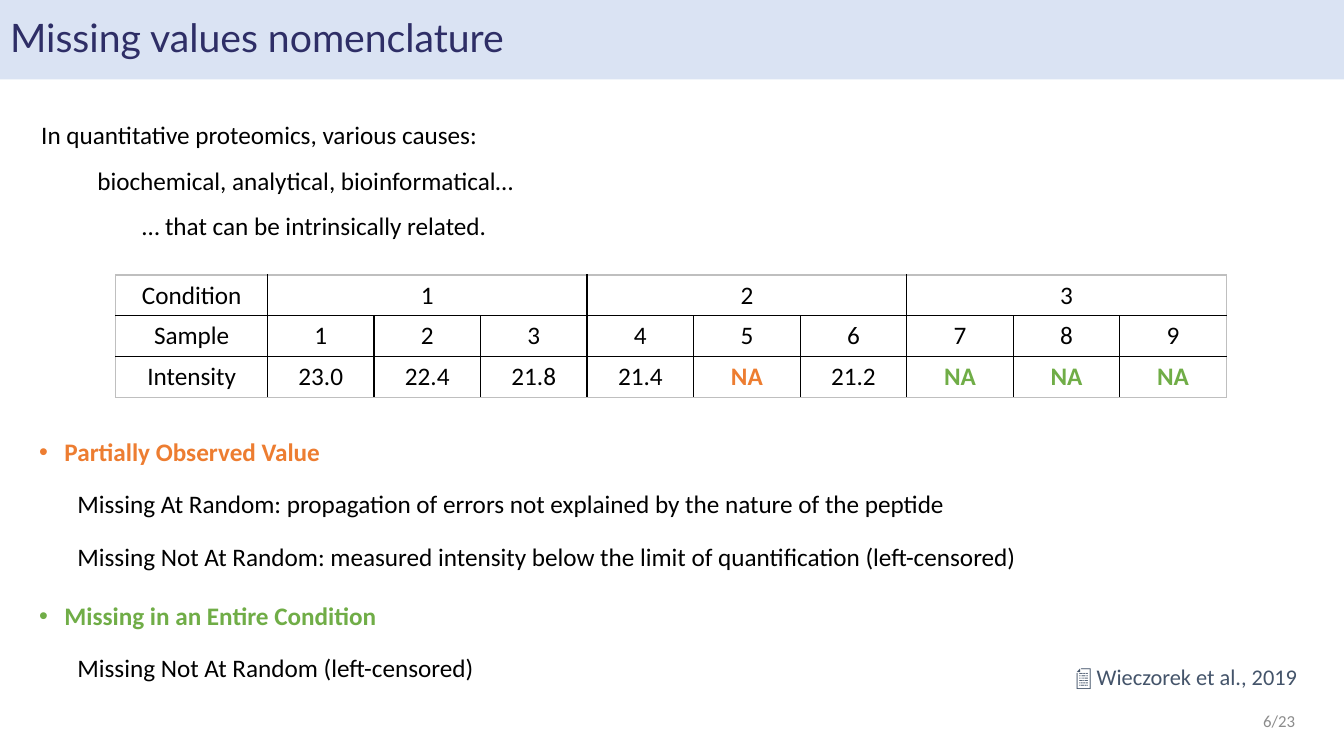
"""Build the slide on the nomenclature of missing values."""
import pptx
import pptx.util
import pptx.dml.color
import pptx.enum.text
import pptx.oxml
import pptx.oxml.ns
from pptx.util import Cm

INK = {"black": "000000", "orange": "ED7D31", "green": "70AD47", "slate": "44546A",
       "navy": "2E2E66", "grey": "8C8C8C", "band": "DAE3F3", "edge": "BFBFBF"}
ALIGN = pptx.enum.text.PP_ALIGN
MID = pptx.enum.text.MSO_ANCHOR.MIDDLE
NONE = pptx.enum.text.MSO_AUTO_SIZE.NONE


def write(para, text, ink="black", size=18, face="Calibri", bold=False, **form):
    para.text = text
    look = {"name": face, "size": pptx.util.Pt(size), "bold": bold}
    for key, val in look.items():
        setattr(para.font, key, val)
    para.font.color.rgb = pptx.dml.color.RGBColor.from_string(INK[ink])
    for key, val in form.items():
        setattr(para, key, val)


def add_box(left, top, width, height, wrap=True, anchor=pptx.enum.text.MSO_ANCHOR.TOP):
    frame = slide.shapes.add_textbox(Cm(left), Cm(top), Cm(width), Cm(height)).text_frame
    frame.word_wrap = wrap
    frame.vertical_anchor = anchor
    return frame


deck = pptx.Presentation()
deck.slide_width, deck.slide_height = Cm(33.87), Cm(19.05)
slide = deck.slides.add_slide(deck.slide_layouts[5])

title = slide.shapes.title
place = {"left": Cm(0), "top": Cm(0), "width": deck.slide_width, "height": Cm(2)}
for key, val in place.items():
    setattr(title, key, val)
title.fill.solid()
title.fill.fore_color.rgb = pptx.dml.color.RGBColor.from_string(INK["band"])
title.text_frame.auto_size = NONE
title.text_frame.vertical_anchor = MID
write(title.text_frame.paragraphs[0], "Missing values nomenclature", "navy", 28, "Lato",
      alignment=ALIGN.LEFT, line_spacing=0.9)

intro = add_box(0.79, 2.51, 14.3, 3.61, wrap=False)
causes = ["In quantitative proteomics, various causes:",
          "\t biochemical, analytical, bioinformatical…",
          "\t\t… that can be intrinsically related."]
for num, text in enumerate(causes):
    para = intro.add_paragraph() if num else intro.paragraphs[0]
    write(para, text, line_spacing=1.5, alignment=ALIGN.LEFT)

rows = [["Condition", "1", "", "", "2", "", "", "3", "", ""],
        ["Sample", *"123456789"],
        ["Intensity", "23.0", "22.4", "21.8", "21.4", "NA", "21.2", "NA", "NA", "NA"]]
deep, wide = len(rows), len(rows[0])
grid = slide.shapes.add_table(deep, wide, Cm(2.92), Cm(6.93), Cm(27.97), Cm(3.09)).table
for num, col in enumerate(grid.columns):
    col.width = Cm(2.685) if num else Cm(3.82)
for row in grid.rows:
    row.height = Cm(1.03)
for num in range(1, wide, 3):
    grid.cell(0, num).merge(grid.cell(0, num + 2))

for r, row in enumerate(rows):
    for c, text in enumerate(row):
        cell = grid.cell(r, c)
        cell.fill.background()
        if cell.is_spanned:
            continue
        cell.vertical_anchor = MID
        ink = "black" if text != "NA" else "orange" if c < 7 else "green"
        write(cell.text_frame.paragraphs[0], text, ink, bold=text == "NA",
              alignment=ALIGN.CENTER)
        span = cell.span_width if cell.is_merge_origin else 1
        outer = {"L": c == 0, "R": c + span == wide, "T": r == 0, "B": r == deep - 1}
        for num, (side, rim) in enumerate(outer.items()):
            line = pptx.oxml.parse_xml(
                f'<a:ln{side} {pptx.oxml.ns.nsdecls("a")} w="12700"><a:solidFill>'
                f'<a:srgbClr val="{INK["edge" if rim else "black"]}"/>'
                f'</a:solidFill></a:ln{side}>')
            cell._tc.get_or_add_tcPr().insert(num, line)

notions = [
    ("Partially Observed Value", "orange"),
    ("Missing At Random: propagation of errors not explained by the nature of the peptide", ""),
    ("Missing Not At Random: measured intensity below the limit of quantification "
     "(left-censored)", ""),
    ("Missing in an Entire Condition", "green"),
    ("Missing Not At Random (left-censored)", "")]
body = add_box(0.74, 10.49, 27.25, 6.78)
for num, (text, ink) in enumerate(notions):
    para = body.add_paragraph() if num else body.paragraphs[0]
    prop = para._p.get_or_add_pPr()
    prop.set("marL", str(Cm(0.635 if ink else 0.96)))
    prop.set("indent", str(Cm(-0.635 if ink else 0)))
    if ink:
        prop.append(pptx.oxml.parse_xml(
            f'<a:buFont {pptx.oxml.ns.nsdecls("a")} typeface="Arial"/>'))
        prop.append(pptx.oxml.parse_xml(
            f'<a:buChar {pptx.oxml.ns.nsdecls("a")} char="•"/>'))
    gap = 0 if num == 0 else 10 if ink else 5
    write(para, text, ink or "black", bold=bool(ink), level=0 if ink else 1,
          line_spacing=1.5, space_before=pptx.util.Pt(gap))

cite = add_box(20.37, 16.59, 12.57, 0.94)
write(cite.paragraphs[0], "📄 Wieczorek et al., 2019", "slate", 16, alignment=ALIGN.RIGHT)
page = add_box(25.27, 17.65, 7.62, 1.02, anchor=MID)
write(page.paragraphs[0], "6/23", "grey", 12, alignment=ALIGN.RIGHT)

deck.save("out.pptx")
